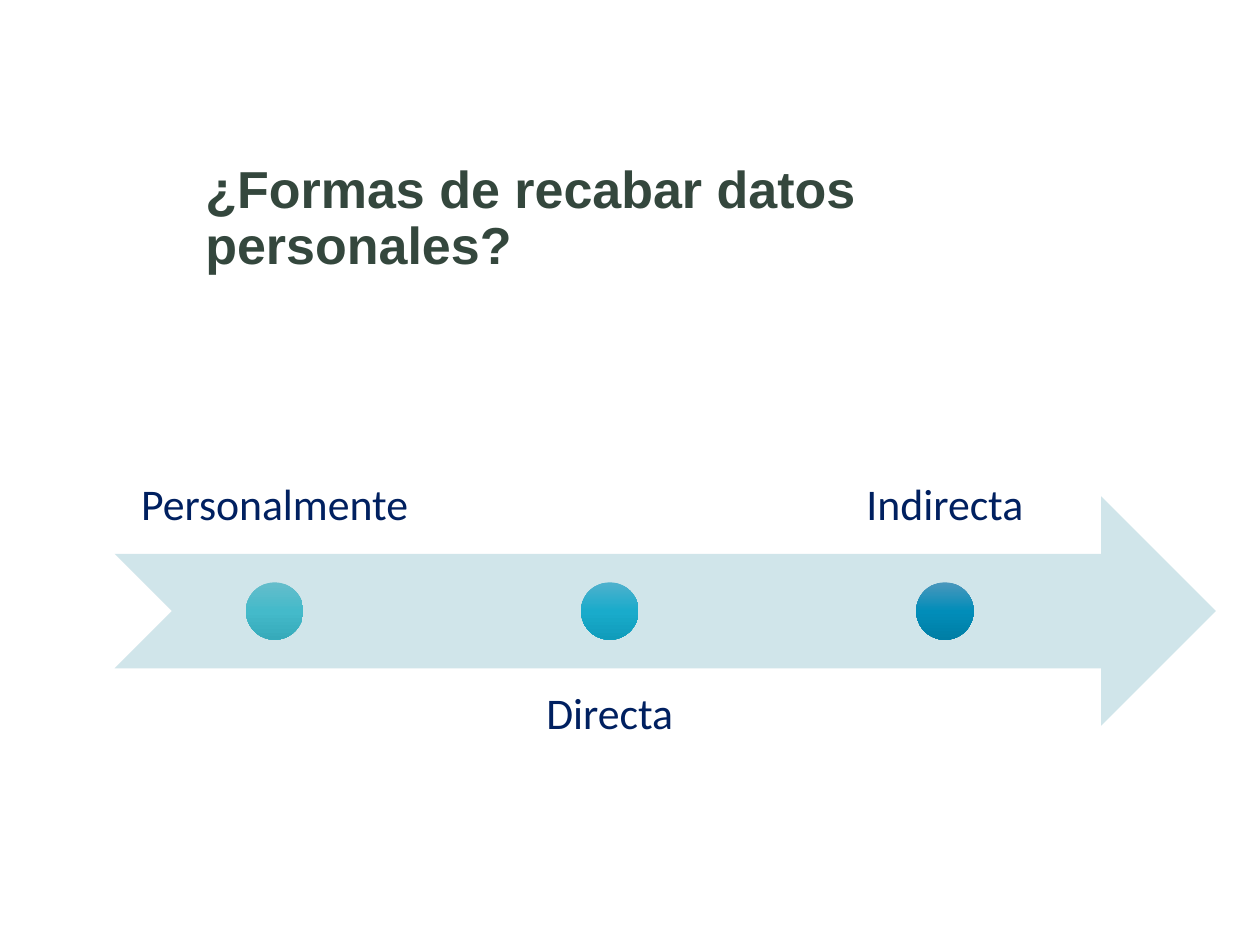
from copy import deepcopy
from dataclasses import dataclass

from pptx import Presentation
from pptx.dml.color import RGBColor
from pptx.enum.shapes import MSO_SHAPE
from pptx.enum.text import MSO_ANCHOR, PP_ALIGN
from pptx.util import Pt

ARROW = MSO_SHAPE.NOTCHED_RIGHT_ARROW
OVAL = MSO_SHAPE.OVAL
TOP, MID, LOW = MSO_ANCHOR.TOP, MSO_ANCHOR.MIDDLE, MSO_ANCHOR.BOTTOM
LEFT, CENTER = PP_ALIGN.LEFT, PP_ALIGN.CENTER

COLORS = {"title": "34473D", "label": "002060", "arrow": "D0E5EA"}
BAND_X, BAND_Y, BAND_W, BAND_H = 65.5, 283.7, 629.3, 131
STEP, WIDTH, DOT = 191.5, 182.9, 32.8


@dataclass
class Stage:
    name: str
    shades: tuple[str, str, str]


STAGES = [
    Stage("Personalmente", ("65BDCB", "44BACA", "36AABA")),
    Stage("Directa", ("4FB1CD", "19ABCB", "109CBB")),
    Stage("Indirecta", ("4B97BC", "018DB9", "007EA5")),
]


def add_text(slide, text: str, *, box: tuple, size: float, font: str,
             color: str, bold: bool = False, align=LEFT, anchor=MID,
             inset: tuple = (7.2, 3.6)) -> None:
    frame = slide.shapes.add_textbox(*map(Pt, box)).text_frame
    frame.word_wrap = True
    frame.vertical_anchor = anchor
    frame.margin_left = frame.margin_right = Pt(inset[0])
    frame.margin_top = frame.margin_bottom = Pt(inset[1])
    para = frame.paragraphs[0]
    para.alignment = align
    para.line_spacing = 0.9
    run = para.add_run()
    run.text = text
    run.font.size = Pt(size)
    run.font.name = font
    run.font.bold = bold
    run.font.color.rgb = RGBColor.from_string(color)


def add_form(slide, kind, box: tuple):
    form = slide.shapes.add_shape(kind, *map(Pt, box))
    form.shadow.inherit = False
    form.line.fill.background()
    return form


def add_dot(slide, box: tuple, shades: tuple[str, str, str]) -> None:
    fill = add_form(slide, OVAL, box).fill
    fill.gradient()
    fill.gradient_angle = 270
    stops = fill.gradient_stops
    first = stops[0]._gs
    first.addnext(deepcopy(first))
    for stop, place, shade in zip(fill.gradient_stops, (0, 0.5, 1), shades):
        stop.position = place
        stop.color.rgb = RGBColor.from_string(shade)


def add_stage(slide, index: int, stage: Stage) -> None:
    left = BAND_X + index * STEP
    above = index % 2 == 0
    shift = BAND_H * 0.75
    top = BAND_Y - shift if above else BAND_Y + shift
    add_text(slide, stage.name, box=(left, top, WIDTH, BAND_H), size=25,
             font="Calibri", color=COLORS["label"], align=CENTER,
             anchor=LOW if above else TOP, inset=(13.7, 13.7))
    dot_x = left + (WIDTH - DOT) / 2
    dot_y = BAND_Y + (BAND_H - DOT) / 2
    add_dot(slide, (dot_x, dot_y, DOT, DOT), stage.shades)


def main() -> None:
    deck = Presentation()
    deck.slide_width, deck.slide_height = Pt(720), Pt(540)
    slide = deck.slides.add_slide(deck.slide_layouts[6])
    add_text(slide, "¿Formas de recabar datos personales?",
             box=(110.2, 88.6, 539.3, 74.2), size=29.7, font="Arial",
             color=COLORS["title"], bold=True)
    band = add_form(slide, ARROW, (BAND_X, BAND_Y, BAND_W, BAND_H))
    band.fill.solid()
    band.fill.fore_color.rgb = RGBColor.from_string(COLORS["arrow"])
    for index, stage in enumerate(STAGES):
        add_stage(slide, index, stage)
    deck.save("out.pptx")


if __name__ == "__main__":
    main()
